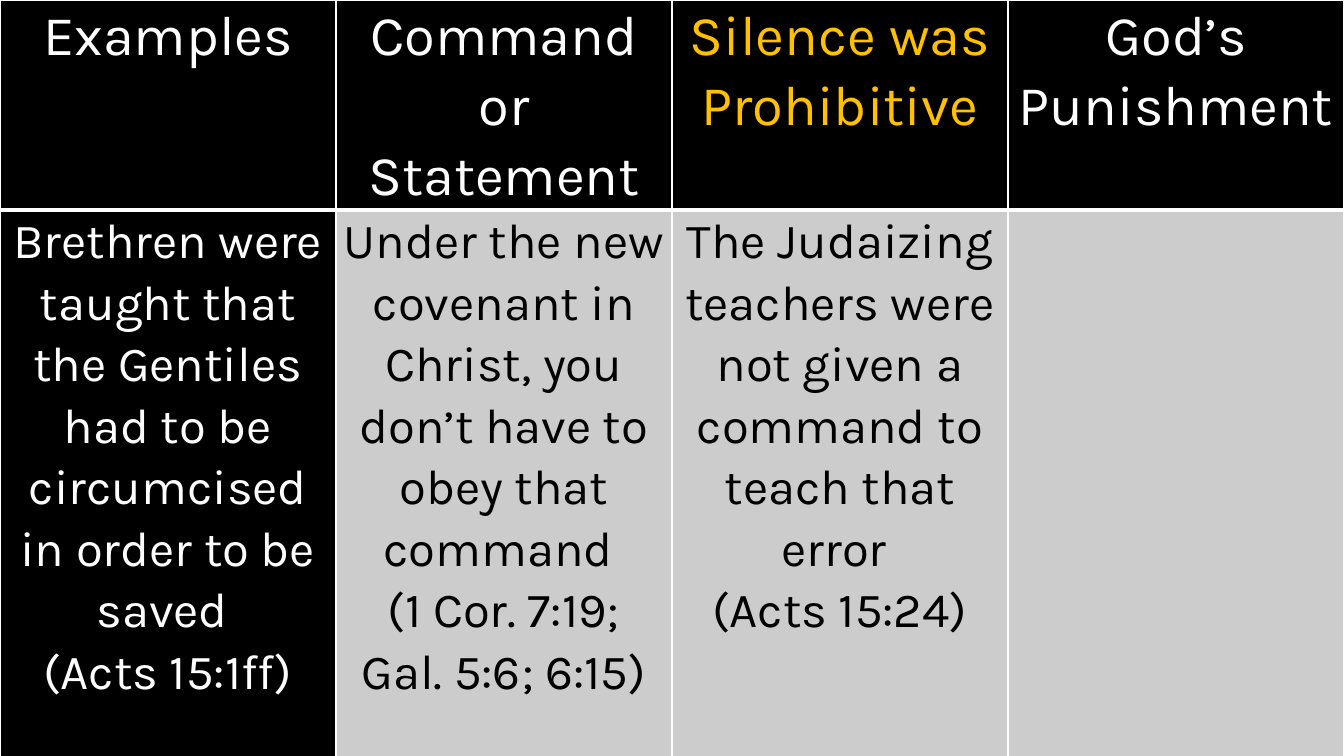
"""Build a slide holding a table of examples, commands, silence and punishment."""
from dataclasses import dataclass

from lxml.etree import SubElement
from pptx import Presentation
from pptx.dml.color import RGBColor
from pptx.enum.text import PP_ALIGN
from pptx.oxml.ns import qn
from pptx.slide import Slide
from pptx.table import Table, _Cell
from pptx.util import Cm, Pt


@dataclass(frozen=True)
class Theme:
    font: str = "Karla"
    heading_size: int = 40
    body_size: int = 35
    line_spacing: float = 1.07
    thin_border: int = 1
    thick_border: int = 3
    black: str = "000000"
    white: str = "FFFFFF"
    gray: str = "CCCCCC"
    gold: str = "FFC000"


@dataclass(frozen=True)
class TableColumn:
    heading: str
    body: str
    heading_color: str
    body_color: str
    body_fill: str


THEME = Theme()
SLIDE_WIDTH, SLIDE_HEIGHT = Cm(33.87), Cm(19.05)
HEADING_HEIGHT = Cm(4.45)
SIDE_MARGIN = Cm(0.19)

COLUMNS = [
    TableColumn(
        "Examples",
        "Brethren were taught that the Gentiles had to be circumcised in order to be saved \n"
        "(Acts 15:1ff)",
        THEME.white, THEME.white, THEME.black,
    ),
    TableColumn(
        "Command or Statement",
        "Under the new covenant in Christ, you don’t have to obey that command \n"
        "(1 Cor. 7:19; Gal. 5:6; 6:15)",
        THEME.white, THEME.black, THEME.gray,
    ),
    TableColumn(
        "Silence was Prohibitive",
        "The Judaizing teachers were not given a command to teach that error \n"
        "(Acts 15:24)",
        THEME.gold, THEME.black, THEME.gray,
    ),
    TableColumn("God’s Punishment", "", THEME.white, THEME.black, THEME.gray),
]


def set_borders(cell: _Cell, top: int, bottom: int) -> None:
    """Draw white borders, with the given top and bottom widths in points."""
    properties = cell._tc.get_or_add_tcPr()
    widths = {"lnL": THEME.thin_border, "lnR": THEME.thin_border, "lnT": top, "lnB": bottom}
    for edge, width in widths.items():
        line = SubElement(properties, qn(f"a:{edge}"), w=str(Pt(width)))
        fill = SubElement(line, qn("a:solidFill"))
        SubElement(fill, qn("a:srgbClr"), val=THEME.white)


def fill_cell(cell: _Cell, text: str, size: int, color: str, fill: str) -> None:
    """Write centred text in a cell and colour its background."""
    cell.fill.solid()
    cell.fill.fore_color.rgb = RGBColor.from_string(fill)
    cell.margin_left = cell.margin_right = SIDE_MARGIN
    cell.margin_top = cell.margin_bottom = Cm(0)
    cell.text_frame.text = text
    for paragraph in cell.text_frame.paragraphs:
        paragraph.alignment = PP_ALIGN.CENTER
        paragraph.line_spacing = THEME.line_spacing
        for run in paragraph.runs:
            run.font.name = THEME.font
            run.font.size = Pt(size)
            run.font.bold = False
            run.font.color.rgb = RGBColor.from_string(color)


def add_column(table: Table, index: int, column: TableColumn) -> None:
    """Fill the heading and body cells of one column."""
    heading, body = table.cell(0, index), table.cell(1, index)
    set_borders(heading, THEME.thin_border, THEME.thick_border)
    set_borders(body, THEME.thick_border, THEME.thin_border)
    fill_cell(heading, column.heading, THEME.heading_size, column.heading_color, THEME.black)
    fill_cell(body, column.body, THEME.body_size, column.body_color, column.body_fill)


def add_examples_table(slide: Slide) -> None:
    """Add the table that covers the whole slide."""
    frame = slide.shapes.add_table(2, len(COLUMNS), Cm(0), Cm(0), SLIDE_WIDTH, SLIDE_HEIGHT)
    table = frame.table
    table.horz_banding = False
    table.rows[0].height = HEADING_HEIGHT
    table.rows[1].height = SLIDE_HEIGHT - HEADING_HEIGHT
    for index, column in enumerate(COLUMNS):
        add_column(table, index, column)


def main() -> None:
    """Create the presentation and save it."""
    presentation = Presentation()
    presentation.slide_width, presentation.slide_height = SLIDE_WIDTH, SLIDE_HEIGHT
    slide = presentation.slides.add_slide(presentation.slide_layouts.get_by_name("Blank"))
    background = slide.background.fill
    background.solid()
    background.fore_color.rgb = RGBColor.from_string(THEME.black)
    add_examples_table(slide)
    presentation.save("out.pptx")


if __name__ == "__main__":
    main()
